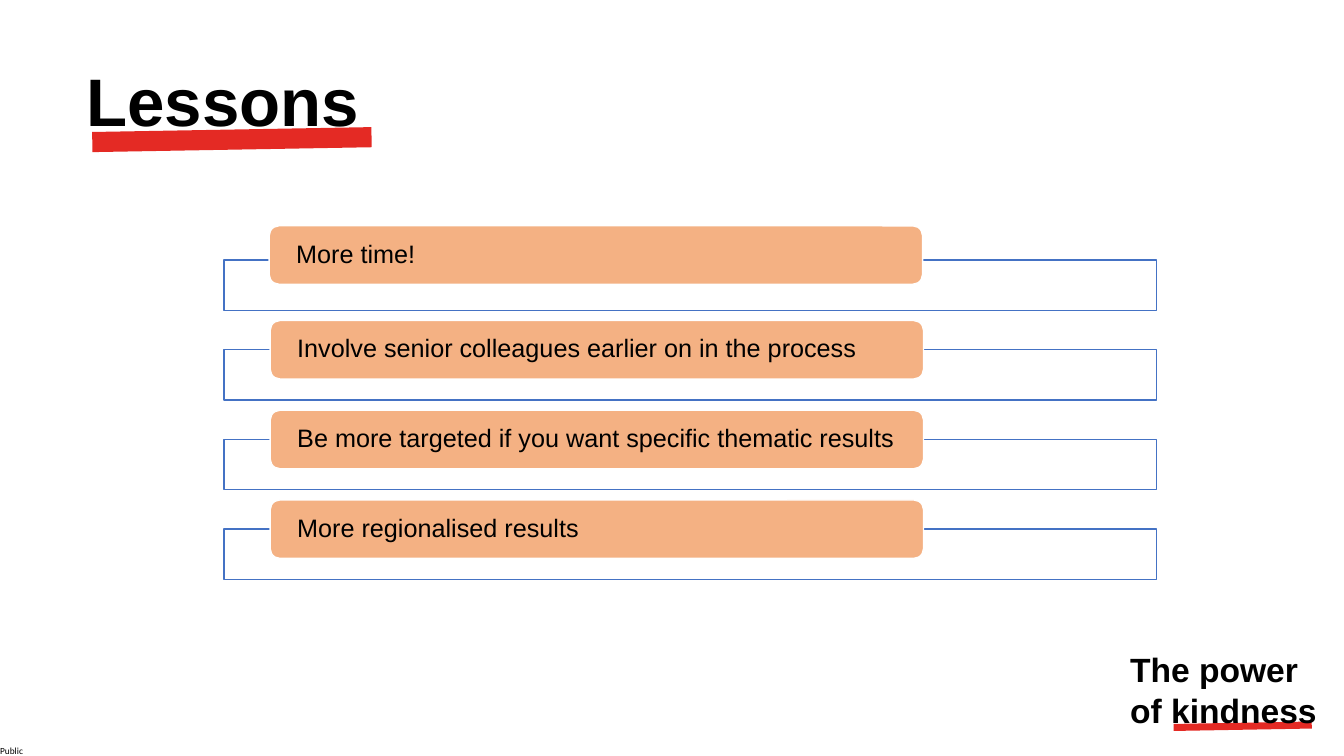
from dataclasses import dataclass

import pptx
import pptx.dml.color
import pptx.enum.shapes
import pptx.enum.text
import pptx.oxml
import pptx.oxml.ns
import pptx.util
from lxml import etree

EMU_PER_PX = 9144
SHAPES = pptx.enum.shapes.MSO_SHAPE
ANCHOR = pptx.enum.text.MSO_ANCHOR
AUTO_SIZE = pptx.enum.text.MSO_AUTO_SIZE


@dataclass(frozen=True)
class Theme:
    ink: str = "000000"
    paper: str = "FFFFFF"
    accent: str = "E42A24"
    lesson: str = "F4B183"
    frame: str = "4472C4"
    font: str = "Arial"
    label_font: str = "Calibri"
    title_size: float = 48
    slogan_size: float = 24
    lesson_size: float = 18
    label_size: float = 6.7


def px(length):
    return pptx.util.Emu(length * EMU_PER_PX)


def color(value):
    return pptx.dml.color.RGBColor.from_string(value)


def apply_format(target, values):
    for name, value in values.items():
        setattr(target, name, value)


class SlideBuilder:
    def __init__(self, presentation, theme):
        self.theme = theme
        self.slide = presentation.slides.add_slide(presentation.slide_layouts[6])

    def shape(self, kind, box, fill, line=None, rotation=0, opacity=None):
        shape = self.slide.shapes.add_shape(kind, *map(px, box))
        shape.shadow.inherit = False
        shape.rotation = rotation
        shape.fill.solid()
        shape.fill.fore_color.rgb = color(fill)
        if opacity is not None:
            solid_fill = shape.element.spPr.find(pptx.oxml.ns.qn("a:solidFill"))
            etree.SubElement(
                solid_fill[0], pptx.oxml.ns.qn("a:alpha"), val=str(opacity * 1000)
            )
        if line:
            shape.line.color.rgb = color(line)
            shape.line.width = pptx.util.Pt(1)
        else:
            shape.line.fill.background()
        return shape

    def fill_text(self, shape, lines, font, frame=None, paragraph_format=None):
        text_frame = shape.text_frame
        apply_format(text_frame, {"word_wrap": True, **(frame or {})})
        for index, line in enumerate(lines):
            paragraph = text_frame.add_paragraph() if index else text_frame.paragraphs[0]
            paragraph.alignment = pptx.enum.text.PP_ALIGN.LEFT
            apply_format(paragraph, paragraph_format or {})
            run = paragraph.add_run()
            run.text = line
            apply_format(run.font, {"name": self.theme.font, **font})
            run.font.color.rgb = color(self.theme.ink)

    def text(self, box, lines, font, frame=None, paragraph_format=None):
        text_box = self.slide.shapes.add_textbox(*map(px, box))
        self.fill_text(text_box, lines, font, frame, paragraph_format)

    def underline(self, box):
        self.shape(SHAPES.RECTANGLE, box, self.theme.accent, rotation=89)

    def lesson(self, text, frame_top, bar_left, bar_top):
        theme = self.theme
        self.shape(
            SHAPES.RECTANGLE, (222, frame_top, 925, 50), theme.paper, theme.frame, opacity=90
        )
        bar = self.shape(
            SHAPES.ROUNDED_RECTANGLE, (bar_left, bar_top, 648, 58), theme.lesson, theme.paper
        )
        self.fill_text(
            bar,
            [text],
            {"size": pptx.util.Pt(theme.lesson_size)},
            {
                "vertical_anchor": ANCHOR.MIDDLE,
                "margin_left": px(24),
                "margin_right": px(24),
                "margin_top": 0,
                "margin_bottom": 0,
            },
            {"line_spacing": 0.9},
        )


def main():
    theme = Theme()
    presentation = pptx.Presentation()
    presentation.slide_width = px(1333)
    presentation.slide_height = px(750)
    builder = SlideBuilder(presentation, theme)

    no_margins = dict.fromkeys(
        ("margin_left", "margin_top", "margin_right", "margin_bottom"), 0
    )
    builder.text(
        (0, 739, 25, 11),
        ["Public"],
        {"name": theme.label_font, "size": pptx.util.Pt(theme.label_size)},
        {**no_margins, "word_wrap": False, "auto_size": AUTO_SIZE.SHAPE_TO_FIT_TEXT},
    )
    builder.underline((1229, 652, 7, 137))
    builder.text(
        (1111, 639, 207, 91),
        ["The power", "of kindness"],
        {"size": pptx.util.Pt(theme.slogan_size), "bold": True},
        {"auto_size": AUTO_SIZE.SHAPE_TO_FIT_TEXT},
    )
    builder.underline((220, 0, 20, 277))
    builder.text(
        (76, 31, 587, 145),
        ["Lessons"],
        {"size": pptx.util.Pt(theme.title_size), "bold": True},
        {"vertical_anchor": ANCHOR.MIDDLE},
        {"line_spacing": 0.9},
    )

    lessons = [
        "More time!",
        "Involve senior colleagues earlier on in the process",
        "Be more targeted if you want specific thematic results",
        "More regionalised results",
    ]
    row_pitch = 89
    for index, lesson in enumerate(lessons):
        frame_top = 258 + index * row_pitch
        bar_left, bar_rise = (268, 29) if index else (267, 34)
        builder.lesson(lesson, frame_top, bar_left, frame_top - bar_rise)

    presentation.save("out.pptx")


if __name__ == "__main__":
    main()
